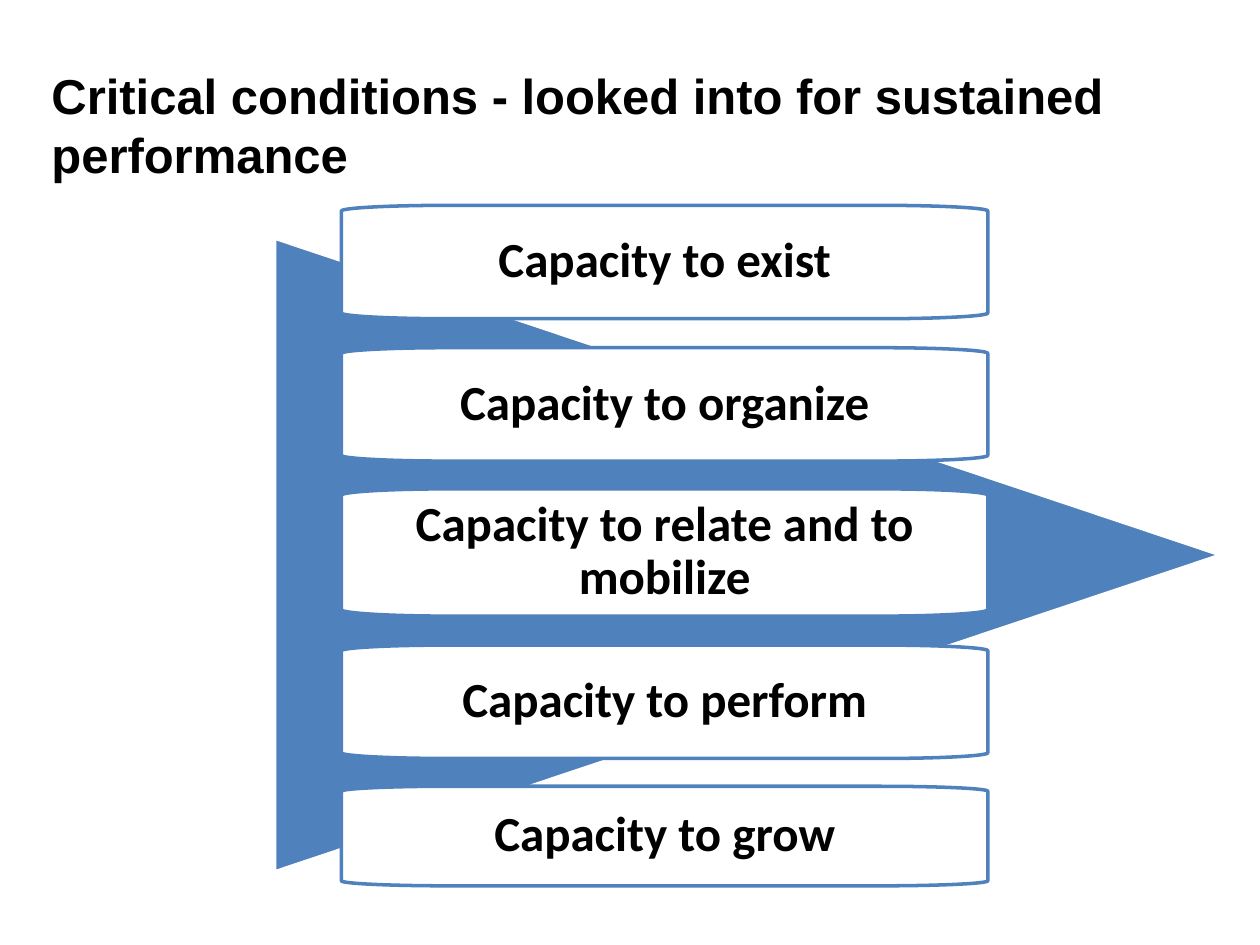
from lxml import etree
from pptx import Presentation
from pptx.dml.color import RGBColor
from pptx.enum.shapes import MSO_SHAPE
from pptx.enum.text import MSO_ANCHOR, MSO_AUTO_SIZE, PP_ALIGN
from pptx.oxml.ns import qn
from pptx.util import Inches, Pt

TRIANGLE = MSO_SHAPE.ISOSCELES_TRIANGLE
MIDDLE = MSO_ANCHOR.MIDDLE
GROW = MSO_AUTO_SIZE.SHAPE_TO_FIT_TEXT
CENTER = PP_ALIGN.CENTER

COLORS = {"white": "FFFFFF", "black": "000000", "blue": "4F81BD"}
PANEL_LEFT, PANEL_WIDTH = 2.71, 5.13
ARC = 0.55
PANELS = [
    ("Capacity to grow", 6.24, 0.79),
    ("Capacity to perform", 5.12, 0.9),
    ("Capacity to relate and to mobilize", 3.88, 1.01),
    ("Capacity to organize", 2.76, 0.9),
    ("Capacity to exist", 1.63, 0.9),
]


def rgb(name):
    """Return the named palette colour."""
    return RGBColor.from_string(COLORS[name])


def style_shape(sp, fill, line):
    """Set a flat fill and a 2 pt outline."""
    sp.shadow.inherit = False
    sp.fill.solid()
    sp.fill.fore_color.rgb = rgb(fill)
    sp.line.color.rgb = rgb(line)
    sp.line.width = Pt(2)


def add_run(p, text, font):
    """Add a bold 28 pt black run."""
    r = p.add_run()
    r.text = text
    r.font.name = font
    r.font.size = Pt(28)
    r.font.bold = True
    r.font.color.rgb = rgb("black")


def add_title(s, text):
    """Add the slide heading."""
    sp = s.shapes.add_textbox(Inches(0.31), Inches(0.47), Inches(9.29), Inches(1.04))
    tf = sp.text_frame
    tf.word_wrap = True
    tf.auto_size = GROW
    add_run(tf.paragraphs[0], text, "Arial")


def add_pointer(s):
    """Add the large triangle that points right."""
    sp = s.shapes.add_shape(TRIANGLE, Inches(3.42), Inches(0.65), Inches(5.03), Inches(7.51))
    sp.rotation = 90
    style_shape(sp, "blue", "white")


def panel_outline(top, height):
    """Return the ends of the panel's sides, clockwise from the top left."""
    rx, ry = PANEL_WIDTH / 6, height / 20
    left, right, bottom = PANEL_LEFT, PANEL_LEFT + PANEL_WIDTH, top + height
    points = [
        (left + rx, top), (right - rx, top), (right, top + ry), (right, bottom - ry),
        (right - rx, bottom), (left + rx, bottom), (left, bottom - ry), (left, top + ry),
        (left + rx, top),
    ]
    return [(Inches(x), Inches(y)) for x, y in points]


def round_corners(sp):
    """Turn every second line of the outline into an elliptical curve."""
    lines = list(sp._element.iter(qn("a:lnTo")))
    ends = [(int(line[0].get("x")), int(line[0].get("y"))) for line in lines]
    for i in range(1, len(lines), 2):
        (x0, y0), (x1, y1) = ends[i - 1], ends[i]
        cx, cy = (x1, y0) if i % 4 == 1 else (x0, y1)
        curve = etree.Element(qn("a:cubicBezTo"))
        controls = [(x + ARC * (cx - x), y + ARC * (cy - y)) for x, y in ends[i - 1:i + 1]]
        for x, y in controls + [(x1, y1)]:
            etree.SubElement(curve, qn("a:pt"), x=str(round(x)), y=str(round(y)))
        lines[i].getparent().replace(lines[i], curve)


def add_panel(s, text, top, height):
    """Add one labelled capacity panel."""
    first, *rest = panel_outline(top, height)
    builder = s.shapes.build_freeform(*first)
    builder.add_line_segments(rest, close=True)
    sp = builder.convert_to_shape()
    round_corners(sp)
    style_shape(sp, "white", "blue")
    tf = sp.text_frame
    tf.word_wrap = True
    tf.vertical_anchor = MIDDLE
    tf.margin_left = tf.margin_right = tf.margin_top = tf.margin_bottom = Inches(0.09)
    p = tf.paragraphs[0]
    p.alignment = CENTER
    p.line_spacing = 0.9
    add_run(p, text, "Calibri")


def main():
    """Build and save the slide."""
    prs = Presentation()
    prs.slide_width, prs.slide_height = Inches(10), Inches(7.5)
    s = prs.slides.add_slide(prs.slide_layouts[6])
    add_title(s, "Critical conditions - looked into for sustained performance")
    add_pointer(s)
    for text, top, height in PANELS:
        add_panel(s, text, top, height)
    prs.save("out.pptx")


if __name__ == "__main__":
    main()
